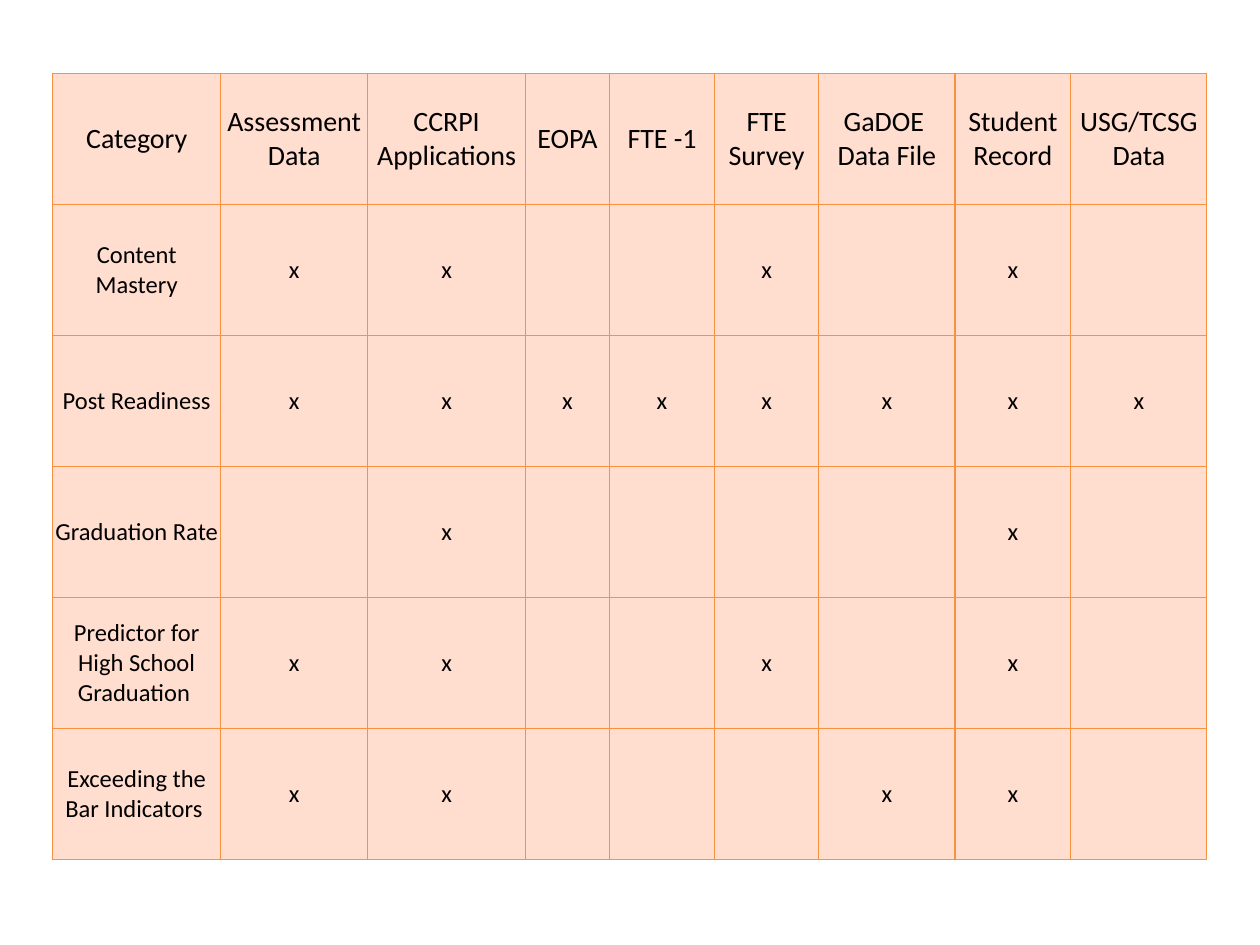
from lxml import etree
from pptx import Presentation
from pptx.dml.color import RGBColor
from pptx.enum.text import MSO_ANCHOR, PP_ALIGN
from pptx.oxml.ns import qn
from pptx.util import Inches, Pt

CENTER = PP_ALIGN.CENTER
MIDDLE = MSO_ANCHOR.MIDDLE

COLORS = {"fill": "FFDDCF", "border": "F69240", "text": "000000"}
FONT = "Calibri"
HEADER_SIZE, BODY_SIZE = 16, 14
BORDER_WIDTH = 0.75
LEFT, TOP = 0.42, 0.58
ROW_HEIGHT = 1.04

COLUMNS = [
    ("Category", 1.33),
    ("Assessment\nData", 1.17),
    ("CCRPI Applications", 1.25),
    ("EOPA", 0.67),
    ("FTE -1", 0.83),
    ("FTE Survey", 0.83),
    ("GaDOE \nData File", 1.08),
    ("Student Record", 0.92),
    ("USG/TCSG Data", 1.08),
]
MARKS = [
    ("Content Mastery", (1, 2, 5, 7)),
    ("Post Readiness", (1, 2, 3, 4, 5, 6, 7, 8)),
    ("Graduation Rate", (2, 7)),
    ("Predictor for High School Graduation ", (1, 2, 5, 7)),
    ("Exceeding the Bar Indicators ", (1, 2, 6, 7)),
]


def add_borders(cell):
    tc_pr = cell._tc.get_or_add_tcPr()
    for side in ("lnL", "lnR", "lnT", "lnB"):
        ln = etree.SubElement(tc_pr, qn(f"a:{side}"), w=str(Pt(BORDER_WIDTH)))
        fill = etree.SubElement(ln, qn("a:solidFill"))
        etree.SubElement(fill, qn("a:srgbClr"), val=COLORS["border"])


def fill_cell(cell, text, size):
    add_borders(cell)
    cell.fill.solid()
    cell.fill.fore_color.rgb = RGBColor.from_string(COLORS["fill"])
    cell.vertical_anchor = MIDDLE
    cell.margin_left = cell.margin_right = cell.margin_top = Inches(0.01)
    cell.margin_bottom = 0
    cell.text_frame.text = text
    for p in cell.text_frame.paragraphs:
        p.alignment = CENTER
        p.font.size = Pt(size)
        for r in p.runs:
            r.font.name = FONT
            r.font.size = Pt(size)
            r.font.bold = False
            r.font.color.rgb = RGBColor.from_string(COLORS["text"])


def main():
    prs = Presentation()
    prs.slide_width, prs.slide_height = Inches(10), Inches(7.5)
    s = prs.slides.add_slide(prs.slide_layouts[6])

    rows = [[name for name, _ in COLUMNS]]
    for category, marked in MARKS:
        rows.append([category] + ["x" if i in marked else "" for i in range(1, len(COLUMNS))])

    width = sum(w for _, w in COLUMNS)
    table = s.shapes.add_table(
        len(rows), len(COLUMNS), Inches(LEFT), Inches(TOP),
        Inches(width), Inches(ROW_HEIGHT * len(rows)),
    ).table
    table.first_row = table.horz_banding = False
    for column, (_, w) in zip(table.columns, COLUMNS):
        column.width = Inches(w)
    for i, row in enumerate(rows):
        table.rows[i].height = Inches(ROW_HEIGHT)
        for j, text in enumerate(row):
            fill_cell(table.cell(i, j), text, BODY_SIZE if i else HEADER_SIZE)

    prs.save("out.pptx")


if __name__ == "__main__":
    main()
